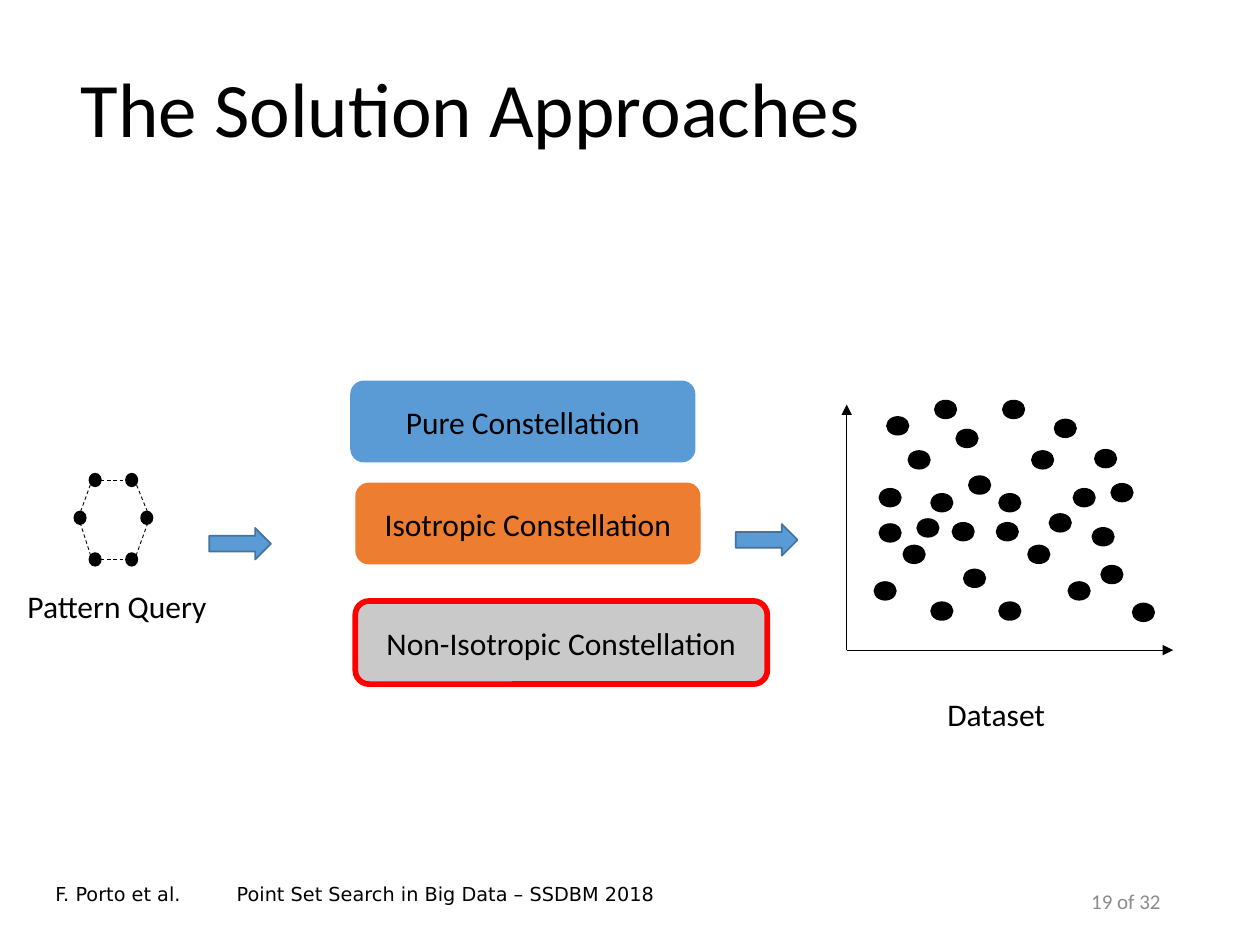
"""Build the slide that shows three solution approaches between a query and a dataset."""
import pptx
import pptx.dml.color
import pptx.enum.dml
import pptx.enum.shapes
import pptx.enum.text
import pptx.oxml
import pptx.oxml.ns
import pptx.util

Inches = pptx.util.Inches
RGBColor = pptx.dml.color.RGBColor
SHAPE = pptx.enum.shapes.MSO_SHAPE
ALIGN = pptx.enum.text.PP_ALIGN
ANCHOR = pptx.enum.text.MSO_ANCHOR

BLACK = RGBColor(0x00, 0x00, 0x00)
GRAY = RGBColor(0x8C, 0x8C, 0x8C)
BLUE = RGBColor(0x5B, 0x9B, 0xD5)
DARK_BLUE = RGBColor(0x43, 0x73, 0x9E)
ORANGE = RGBColor(0xED, 0x7D, 0x31)
SILVER = RGBColor(0xC9, 0xC9, 0xC9)
RED = RGBColor(0xFF, 0x00, 0x00)

DATASET_POINTS = [
    (7.42, 3.18), (7.21, 3.58), (7.28, 4.12), (8.19, 3.58), (7.96, 3.18),
    (7.91, 4.15), (7.59, 3.41), (7.04, 3.31), (6.98, 3.88), (7.69, 3.78),
    (8.52, 3.88), (8.37, 3.33), (8.69, 3.57), (7.39, 3.92), (7.17, 4.33),
    (7.39, 4.78), (8.16, 4.33), (7.93, 3.92), (7.93, 4.78), (7.56, 4.15),
    (6.98, 4.16), (6.94, 4.62), (7.65, 4.52), (8.48, 4.62), (8.33, 4.08),
    (8.67, 4.19), (8.99, 4.79), (8.74, 4.49), (8.82, 3.84),
]
PATTERN_POINTS = [(0.71, 3.76), (0.59, 4.06), (0.71, 4.39),
                  (1.12, 4.06), (1, 3.76), (1, 4.39)]
PATTERN_EDGES = [
    (0.8, 4.44, 1, 4.44), (1.08, 4.41, 1.17, 4.16), (0.72, 4.41, 0.64, 4.16),
    (0.64, 4.06, 0.72, 3.84), (1.17, 4.06, 1.08, 3.84), (0.8, 3.81, 1, 3.81),
]
APPROACHES = [
    ("Pure Constellation", (2.78, 3.02, 2.74, 0.65), BLUE, None, 0),
    ("Isotropic Constellation", (2.82, 3.83, 2.74, 0.65), ORANGE, None, 0),
    ("Non-Isotropic Constellation", (2.82, 4.77, 3.27, 0.66), SILVER, RED, 3.25),
]


def write_text(shape, text, size, font="Calibri", color=BLACK,
               align=ALIGN.LEFT, anchor=ANCHOR.TOP, wrap=True):
    """Fill the text frame of a shape with one formatted run."""
    frame = shape.text_frame
    frame.word_wrap = wrap
    frame.vertical_anchor = anchor
    paragraph = frame.paragraphs[0]
    paragraph.alignment = align
    run = paragraph.add_run()
    run.text = text
    run.font.size = pptx.util.Pt(size)
    run.font.name = font
    run.font.color.rgb = color
    return paragraph


def add_label(slide, box, text, size, **options):
    """Add a text box with one line of text."""
    label = slide.shapes.add_textbox(*map(Inches, box))
    write_text(label, text, size, **options)


def add_figure(shapes, kind, box, fill, line=None, width=1):
    """Add a filled preset shape without a shadow."""
    shape = shapes.add_shape(kind, *map(Inches, box))
    shape.shadow.inherit = False
    shape.fill.solid()
    shape.fill.fore_color.rgb = fill
    if line is None:
        shape.line.fill.background()
    else:
        shape.line.color.rgb = line
        shape.line.width = pptx.util.Pt(width)
    return shape


def add_dots(shapes, points, width, height):
    """Add one black dot for each top left corner."""
    for left, top in points:
        add_figure(shapes, SHAPE.OVAL, (left, top, width, height), BLACK, BLACK)


def add_line(shapes, ends):
    """Add a thin black straight line and return it."""
    connector = shapes.add_connector(
        pptx.enum.shapes.MSO_CONNECTOR.STRAIGHT, *map(Inches, ends))
    connector.line.color.rgb = BLACK
    connector.line.width = pptx.util.Pt(0.5)
    properties = connector._element.spPr
    properties.append(pptx.oxml.parse_xml(
        f"<a:effectLst {pptx.oxml.ns.nsdecls('a')}/>"))
    return connector


def add_axis(shapes, ends):
    """Add a line that ends in a triangular arrowhead."""
    axis = add_line(shapes, ends)
    axis.line._get_or_add_ln().append(pptx.oxml.parse_xml(
        f"<a:tailEnd {pptx.oxml.ns.nsdecls('a')} type='triangle'/>"))


def add_dataset(slide):
    """Add the scatter of points with its two axes."""
    group = slide.shapes.add_group_shape()
    add_dots(group.shapes, DATASET_POINTS, 0.17, 0.14)
    for end in ((6.72, 3.21), (9.31, 5.16)):
        add_axis(group.shapes, (6.72, 5.16, *end))
    add_label(slide, (7.42, 5.47, 0.99, 0.4), "Dataset", 18, wrap=False)


def add_pattern(slide):
    """Add the dashed hexagon of the query."""
    group = slide.shapes.add_group_shape()
    add_dots(group.shapes, PATTERN_POINTS, 0.09, 0.1)
    for ends in PATTERN_EDGES:
        edge = add_line(group.shapes, ends)
        edge.line.dash_style = pptx.enum.dml.MSO_LINE.DASH
    add_label(slide, (0.12, 4.61, 1.64, 0.4), "Pattern Query", 18, wrap=False)


def add_approaches(slide):
    """Add the three approach boxes and the arrows on both sides."""
    for text, box, fill, line, width in APPROACHES:
        shape = add_figure(slide.shapes, SHAPE.ROUNDED_RECTANGLE, box, fill, line, width)
        write_text(shape, text, 18, align=ALIGN.CENTER, anchor=ANCHOR.MIDDLE)
    for left, top in ((1.66, 4.19), (5.84, 4.16)):
        add_figure(slide.shapes, SHAPE.RIGHT_ARROW, (left, top, 0.49, 0.25),
                   BLUE, DARK_BLUE)


def set_title(slide, text):
    """Place and format the title placeholder."""
    title = slide.shapes.title
    title.left, title.top, title.width, title.height = map(
        Inches, (0.54, 0.17, 8.62, 1.45))
    paragraph = write_text(title, text, 44, anchor=ANCHOR.MIDDLE)
    paragraph.line_spacing = 0.9


def add_footer(slide):
    """Add the page number, the authors and the talk name."""
    add_label(slide, (7.06, 6.95, 2.25, 0.4), "19 of 32", 12, color=GRAY,
              align=ALIGN.RIGHT, anchor=ANCHOR.MIDDLE)
    add_label(slide, (0.34, 6.95, 1.32, 0.4), "F. Porto et al.", 11,
              font="DejaVu Sans")
    add_label(slide, (1.78, 6.95, 6.45, 0.4),
              "Point Set Search in Big Data – SSDBM 2018", 11, font="DejaVu Sans")


def main():
    """Build the slide and save it."""
    presentation = pptx.Presentation()
    presentation.slide_width = Inches(10)
    presentation.slide_height = Inches(7.5)
    slide = presentation.slides.add_slide(
        presentation.slide_layouts.get_by_name("Title Only"))
    set_title(slide, "The Solution Approaches")
    add_dataset(slide)
    add_pattern(slide)
    add_approaches(slide)
    add_footer(slide)
    presentation.save("out.pptx")


if __name__ == "__main__":
    main()
